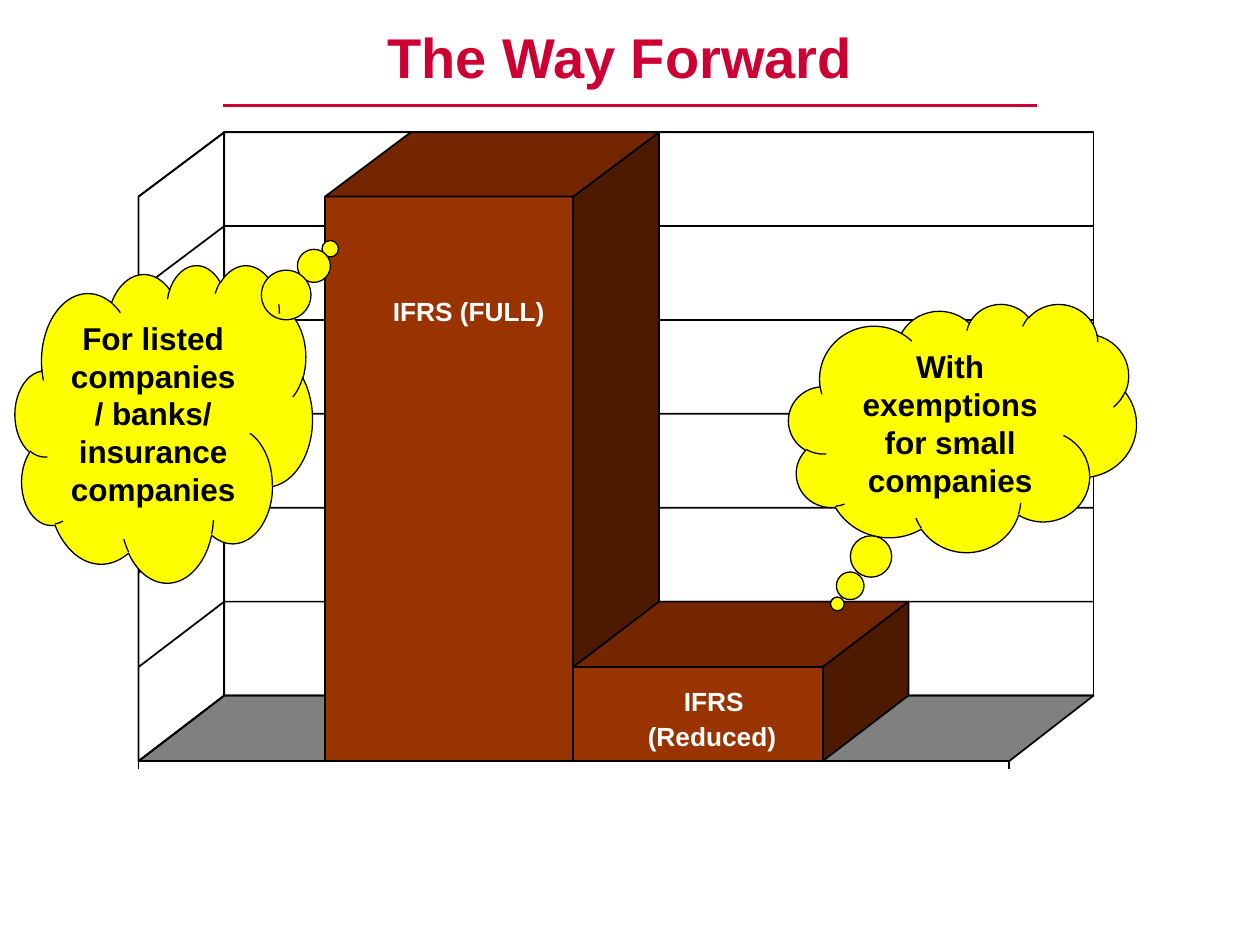
from lxml.etree import SubElement
from pptx import Presentation
from pptx.dml.color import RGBColor
from pptx.enum.shapes import MSO_CONNECTOR, MSO_SHAPE
from pptx.enum.text import MSO_ANCHOR, PP_ALIGN
from pptx.oxml.ns import qn
from pptx.util import Inches, Pt

BLACK, WHITE, RED, YELLOW, GREY = "000000", "FFFFFF", "CC0033", "FFFF00", "808080"
FRONT, SIDE, TOP = "993300", "4D1A00", "732600"

# Chart box: the front plane and the back plane, in inches
FRONT_LEFT, FRONT_RIGHT, FRONT_TOP, FRONT_BASE = 1.1, 8.01, 1.56, 6.04
BACK_LEFT, BACK_RIGHT, BACK_TOP, BACK_BASE = 1.78, 8.68, 1.05, 5.52
INTERVALS = 6
DEPTH = 0.68


def color(hex_string):
    return RGBColor.from_string(hex_string)


def put_text(sp, text, size=18, hue=BLACK, wrap=True, margin=None, anchor=None):
    """Write centred bold text into a shape or text box."""
    tf = sp.text_frame
    tf.word_wrap = wrap
    if margin is not None:
        tf.margin_left = tf.margin_right = Inches(margin)
        tf.margin_top = tf.margin_bottom = Inches(margin)
    if anchor is not None:
        tf.vertical_anchor = anchor
    p = tf.paragraphs[0]
    p.alignment = PP_ALIGN.CENTER
    r = p.add_run()
    r.text = text
    r.font.name = "Arial"
    r.font.size = Pt(size)
    r.font.bold = True
    r.font.color.rgb = color(hue)


def grid_level(i):
    """Front and back height of grid line i, counted from the floor."""
    share = i / INTERVALS
    return (FRONT_BASE - share * (FRONT_BASE - FRONT_TOP),
            BACK_BASE - share * (BACK_BASE - BACK_TOP))


class Sketch:
    """Holds the current slide, the shapes drawn on and the outline style."""

    def __init__(self, slide, line_hue=BLACK, line_width=1):
        self.slide = slide
        self.shapes = slide.shapes
        self.line_hue = line_hue
        self.line_width = line_width

    def paint(self, sp, fill=None, outline=True, width=None):
        sp.shadow.inherit = False
        if fill:
            sp.fill.solid()
            sp.fill.fore_color.rgb = color(fill)
        else:
            sp.fill.background()
        if outline:
            sp.line.color.rgb = color(self.line_hue)
            sp.line.width = Pt(width or self.line_width)
        else:
            sp.line.fill.background()
        return sp

    def polygon(self, points, fill=None, outline=True, close=True):
        pts = [(Inches(x), Inches(y)) for x, y in points]
        builder = self.shapes.build_freeform(*pts[0], scale=1.0)
        builder.add_line_segments(pts[1:], close=close)
        return self.paint(builder.convert_to_shape(), fill, outline)

    def rect(self, left, top, right, bottom, fill=None):
        sp = self.shapes.add_shape(MSO_SHAPE.RECTANGLE, Inches(left), Inches(top),
                                   Inches(right - left), Inches(bottom - top))
        return self.paint(sp, fill)

    def line(self, x1, y1, x2, y2, hue=None, width=None):
        cx = self.shapes.add_connector(MSO_CONNECTOR.STRAIGHT, Inches(x1), Inches(y1),
                                       Inches(x2), Inches(y2))
        cx.line.color.rgb = color(hue or self.line_hue)
        cx.line.width = Pt(width or self.line_width)
        SubElement(cx._element.spPr, qn("a:effectLst"))
        return cx

    def text(self, left, top, width, height, text, **style):
        tb = self.shapes.add_textbox(Inches(left), Inches(top), Inches(width), Inches(height))
        put_text(tb, text, **style)
        return tb

    def cloud(self, left, top, width, height, tail, text):
        sp = self.shapes.add_shape(MSO_SHAPE.CLOUD_CALLOUT, Inches(left), Inches(top),
                                   Inches(width), Inches(height))
        sp.adjustments[0], sp.adjustments[1] = tail
        self.paint(sp, YELLOW, width=0.75)
        put_text(sp, text, anchor=MSO_ANCHOR.TOP)
        return sp

    def column(self, left, right, level):
        """A solid column that reaches the given grid level."""
        front, back = grid_level(level)
        self.polygon([(right, FRONT_BASE), (right, front), (right + DEPTH, back),
                      (right + DEPTH, BACK_BASE)], SIDE)
        self.rect(left, front, right, FRONT_BASE, FRONT)
        self.polygon([(right, front), (right + DEPTH, back), (left + DEPTH, back),
                      (left, front)], TOP)


def main():
    prs = Presentation()
    prs.slide_width, prs.slide_height = Inches(10), Inches(7.5)
    s = Sketch(prs.slides.add_slide(prs.slide_layouts[6]))
    label = dict(size=15, hue=WHITE, wrap=False, margin=0)

    # Floor, grid lines and walls
    floor = [(BACK_RIGHT, BACK_BASE), (FRONT_RIGHT, FRONT_BASE),
             (FRONT_LEFT, FRONT_BASE), (BACK_LEFT, BACK_BASE)]
    s.polygon(floor, GREY, outline=False)
    for i in range(INTERVALS + 1):
        front, back = grid_level(i)
        s.polygon([(FRONT_LEFT, front), (BACK_LEFT, back), (BACK_RIGHT, back)], close=False)
    s.polygon(floor)
    s.polygon([(FRONT_LEFT, FRONT_BASE), (FRONT_LEFT, FRONT_TOP),
               (BACK_LEFT, BACK_TOP), (BACK_LEFT, BACK_BASE)])
    s.rect(BACK_LEFT, BACK_TOP, BACK_RIGHT, BACK_BASE)

    # Full column
    s.column(2.58, 4.55, INTERVALS)
    s.text(3.09, 2.34, 1.26, 0.25, "IFRS (FULL)", **label)

    # Reduced column, grouped with its label
    s.shapes = s.slide.shapes.add_group_shape().shapes
    s.column(4.55, 6.53, 1)
    s.text(5.37, 5.44, 0.59, 0.25, "IFRS", **label)
    s.text(5.14, 5.72, 1.02, 0.25, "(Reduced)", **label)
    s.shapes = s.slide.shapes

    # Axis with end ticks
    s.line(FRONT_LEFT, FRONT_BASE, FRONT_RIGHT, FRONT_BASE)
    for x in (FRONT_LEFT, FRONT_RIGHT):
        s.line(x, FRONT_BASE, x, 6.1)

    # Title and rule
    s.line(1.77, 0.84, 8.23, 0.84, hue=RED, width=1.5)
    s.text(1.69, 0.13, 6.46, 0.63, "The Way Forward", size=32, hue=RED,
           anchor=MSO_ANCHOR.MIDDLE)

    # Thought clouds
    s.cloud(0.12, 2.1, 2.36, 2.52, (0.56, -0.55),
            "For listed companies/ banks/ insurance companies")
    s.cloud(6.26, 2.41, 2.76, 1.97, (-0.36, 0.71),
            "With exemptions for small companies")

    prs.save("out.pptx")


if __name__ == "__main__":
    main()
